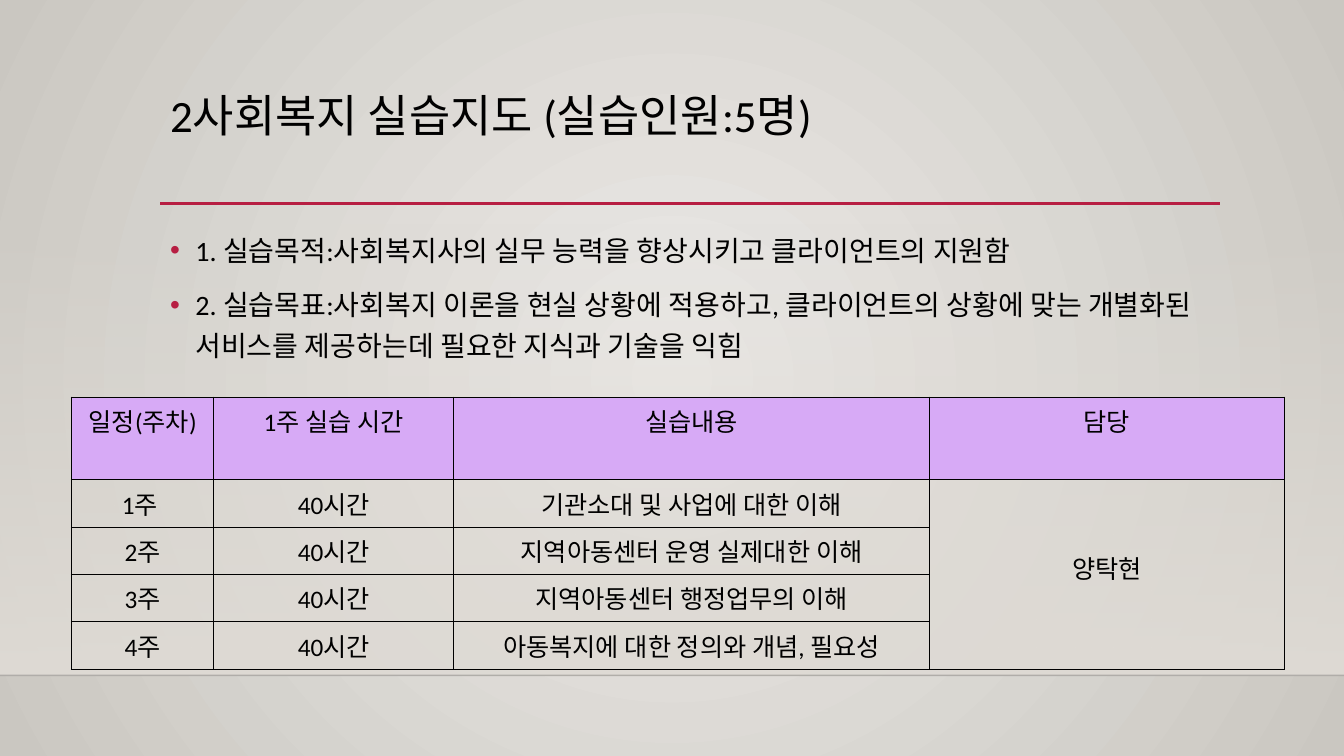
from lxml import etree
from pptx import Presentation
from pptx.dml.color import RGBColor
from pptx.enum.shapes import MSO_CONNECTOR as Connector, MSO_SHAPE as Shape
from pptx.enum.text import MSO_ANCHOR as Anchor, PP_ALIGN as Align
from pptx.oxml import parse_xml
from pptx.oxml.ns import nsdecls, qn
from pptx.util import Inches, Pt

TITLE = "2사회복지 실습지도 (실습인원:5명)"
POINTS = [
    "1. 실습목적:사회복지사의 실무 능력을 향상시키고 클라이언트의 지원함",
    "2. 실습목표:사회복지 이론을 현실 상황에 적용하고, 클라이언트의 상황에 맞는 "
    "개별화된 서비스를 제공하는데 필요한 지식과 기술을 익힘",
]
HEADINGS = ["일정(주차)", "1주 실습 시간", "실습내용", "담당"]
HOURS = "40시간"
SUPERVISOR = "양탁현"
WEEKS = [
    ("1주 ", "기관소대 및 사업에 대한 이해"),
    ("2주", "지역아동센터 운영 실제대한 이해"),
    ("3주", "지역아동센터 행정업무의 이해"),
    ("4주", "아동복지에 대한 정의와 개념, 필요성"),
]
COLORS = {
    "center": "ECEAE7", "edge": "CAC7C1", "wall": "DFDBD5", "floor": "000001",
    "accent": "B71E42", "heading": "D7AAF6", "text": "000000",
}
WIDTH, HEIGHT = 13.33, 7.5
LEFT, TEXT_WIDTH = 1.59, 10.5
WALL_TOP, FLOOR_Y, RULE_Y = 2.21, 6.7, 2.02
COLUMNS = [1.41, 2.38, 4.72, 3.52]
ROWS = [0.82] + [0.47] * len(WEEKS)
TITLE_FORMAT = {"line_spacing": 0.9}
POINT_FORMAT = {"line_spacing": 1.2}
CELL_FORMAT = {"alignment": Align.CENTER}


def color(key):
    return RGBColor.from_string(COLORS[key])


def gradient(stops, direction):
    marks = "".join(
        f'<a:gs pos="{pos}"><a:srgbClr val="{COLORS[key]}">'
        f'<a:alpha val="{alpha}"/></a:srgbClr></a:gs>'
        for pos, key, alpha in stops
    )
    return (f'<a:gradFill {nsdecls("a")} rotWithShape="1">'
            f"<a:gsLst>{marks}</a:gsLst>{direction}</a:gradFill>")


def write(paragraph, text, size, formats):
    paragraph.add_run().text = text
    for name, value in formats.items():
        setattr(paragraph, name, value)
    for name, value in {"size": Pt(size), "name": "Calibri"}.items():
        setattr(paragraph.runs[0].font, name, value)
    paragraph.runs[0].font.color.rgb = color("text")


def add_frame(slide, top, height):
    frame = slide.shapes.add_textbox(
        Inches(LEFT), Inches(top), Inches(TEXT_WIDTH), Inches(height)).text_frame
    frame.word_wrap = True
    return frame


def add_rule(slide, start, end, y, key, weight, opacity=100):
    rule = slide.shapes.add_connector(
        Connector.STRAIGHT, Inches(start), Inches(y), Inches(end), Inches(y))
    rule.line.color.rgb = color(key)
    rule.line.width = Pt(weight)
    tint = next(rule.line._ln.iter(qn("a:srgbClr")))
    etree.SubElement(tint, qn("a:alpha"), val=str(opacity * 1000))
    etree.SubElement(rule._element.spPr, qn("a:effectLst"))


def add_bullet(paragraph):
    props = paragraph._p.get_or_add_pPr()
    props.set("marL", str(Inches(0.25)))
    props.set("indent", str(-Inches(0.25)))
    tint = etree.SubElement(props, qn("a:buClr"))
    etree.SubElement(tint, qn("a:srgbClr"), val=COLORS["accent"])
    etree.SubElement(props, qn("a:buFont"), typeface="Arial")
    etree.SubElement(props, qn("a:buChar"), char="•")


def add_borders(cell):
    props = cell._tc.get_or_add_tcPr()
    for index, side in enumerate(("lnL", "lnR", "lnT", "lnB")):
        props.insert(index, parse_xml(
            f'<a:{side} {nsdecls("a")} w="{Pt(1)}"><a:solidFill>'
            f'<a:srgbClr val="{COLORS["text"]}"/></a:solidFill></a:{side}>'))


def add_backdrop(slide):
    radial = ('<a:path path="circle"><a:fillToRect l="50000" t="50000" '
              'r="50000" b="50000"/></a:path>')
    fill = gradient([(0, "center", 100000), (100000, "edge", 100000)], radial)
    slide._element.cSld.insert(0, parse_xml(
        f'<p:bg {nsdecls("p")}><p:bgPr>{fill}'
        f'<a:effectLst {nsdecls("a")}/></p:bgPr></p:bg>'))
    wall = slide.shapes.add_shape(
        Shape.RECTANGLE, 0, Inches(WALL_TOP), Inches(WIDTH), Inches(FLOOR_Y - WALL_TOP))
    wall.shadow.inherit = False
    wall.line.fill.background()
    fade = gradient([(0, "wall", 0), (100000, "wall", 100000)],
                    '<a:lin ang="5400000" scaled="0"/>')
    wall._element.spPr.find(qn("a:prstGeom")).addnext(parse_xml(fade))
    add_rule(slide, 0, WIDTH, FLOOR_Y, "floor", 1, 20)
    add_rule(slide, LEFT, 12.1, RULE_Y, "accent", 2.5)


def add_schedule(slide):
    schedule = slide.shapes.add_table(
        len(ROWS), len(COLUMNS), Inches(0.71), Inches(3.94),
        Inches(sum(COLUMNS)), Inches(sum(ROWS))).table
    schedule.first_row = schedule.horz_banding = False
    for column, width in zip(schedule.columns, COLUMNS):
        column.width = Inches(width)
    for row, height in zip(schedule.rows, ROWS):
        row.height = Inches(height)
    lines = [HEADINGS] + [(week, HOURS, topic, "") for week, topic in WEEKS]
    for r, line in enumerate(lines):
        for c, text in enumerate(line):
            cell = schedule.cell(r, c)
            if r == 0:
                cell.fill.solid()
                cell.fill.fore_color.rgb = color("heading")
            else:
                cell.fill.background()
            add_borders(cell)
            if text:
                write(cell.text_frame.paragraphs[0], text, 18, CELL_FORMAT)
    supervisor = schedule.cell(1, 3)
    supervisor.merge(schedule.cell(len(WEEKS), 3))
    supervisor.vertical_anchor = Anchor.MIDDLE
    supervisor.margin_bottom = Inches(0.19)
    write(supervisor.text_frame.paragraphs[0], SUPERVISOR, 18, CELL_FORMAT)


def main():
    deck = Presentation()
    deck.slide_width, deck.slide_height = Inches(WIDTH), Inches(HEIGHT)
    slide = deck.slides.add_slide(deck.slide_layouts[6])
    add_backdrop(slide)
    write(add_frame(slide, 0.88, 1.15).paragraphs[0], TITLE, 32, TITLE_FORMAT)
    goals = add_frame(slide, 2.2, 3.77)
    for index, point in enumerate(POINTS):
        paragraph = goals.add_paragraph() if index else goals.paragraphs[0]
        add_bullet(paragraph)
        spacing = {"space_before": Pt(10)} if index else {}
        write(paragraph, point, 20, POINT_FORMAT | spacing)
    add_schedule(slide)
    deck.save("out.pptx")


if __name__ == "__main__":
    main()
